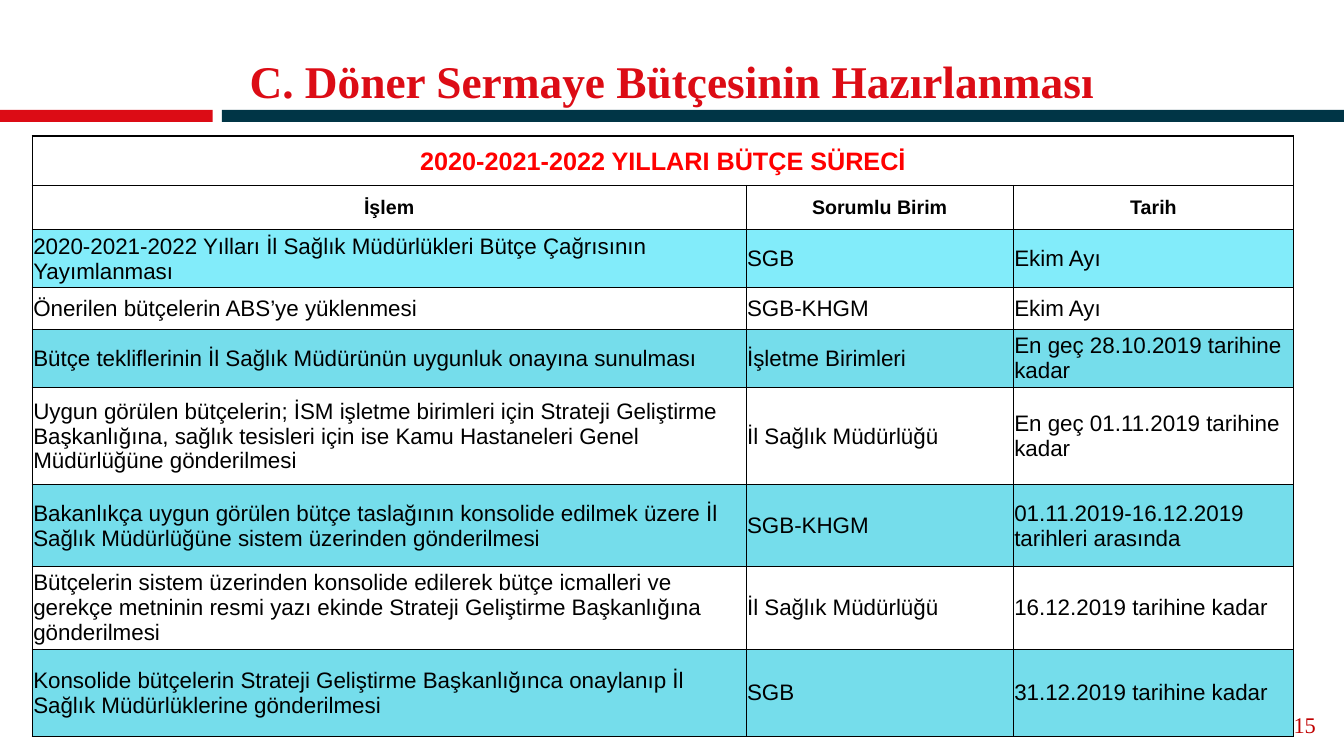
from dataclasses import dataclass

from lxml.etree import SubElement
from pptx import Presentation
from pptx.dml.color import RGBColor
from pptx.enum.shapes import MSO_SHAPE
from pptx.enum.text import MSO_ANCHOR, PP_ALIGN
from pptx.oxml.ns import qn
from pptx.util import Inches, Pt

TITLE = "C. Döner Sermaye Bütçesinin Hazırlanması"
SLIDE_NUMBER = "15"
TABLE_TITLE = "2020-2021-2022 YILLARI BÜTÇE SÜRECİ"
HEADERS = ("İşlem", "Sorumlu Birim", "Tarih")
STEPS = [
    ("2020-2021-2022 Yılları İl Sağlık Müdürlükleri Bütçe Çağrısının Yayımlanması",
     "SGB", "Ekim Ayı"),
    ("Önerilen bütçelerin ABS’ye yüklenmesi", "SGB-KHGM", "Ekim Ayı"),
    ("Bütçe tekliflerinin İl Sağlık Müdürünün uygunluk onayına sunulması",
     "İşletme Birimleri", "En geç 28.10.2019 tarihine kadar"),
    ("Uygun görülen bütçelerin; İSM işletme birimleri için Strateji Geliştirme Başkanlığına, "
     "sağlık tesisleri için ise Kamu Hastaneleri Genel Müdürlüğüne gönderilmesi",
     "İl Sağlık Müdürlüğü", "En geç 01.11.2019 tarihine kadar"),
    ("Bakanlıkça uygun görülen bütçe taslağının konsolide edilmek üzere İl Sağlık Müdürlüğüne "
     "sistem üzerinden gönderilmesi",
     "SGB-KHGM", "01.11.2019-16.12.2019 tarihleri arasında"),
    ("Bütçelerin sistem üzerinden konsolide edilerek bütçe icmalleri ve gerekçe metninin resmi "
     "yazı ekinde Strateji Geliştirme Başkanlığına gönderilmesi",
     "İl Sağlık Müdürlüğü", "16.12.2019 tarihine kadar"),
    ("Konsolide bütçelerin Strateji Geliştirme Başkanlığınca onaylanıp İl Sağlık "
     "Müdürlüklerine gönderilmesi",
     "SGB", "31.12.2019 tarihine kadar"),
]
SLIDE_WIDTH, SLIDE_HEIGHT = 13.33, 7.5
COLUMN_WIDTHS = (7.08, 2.65, 2.78)
ROW_HEIGHTS = (0.49, 0.44, 0.57, 0.42, 0.57, 0.97, 0.81, 0.82, 0.87)
TABLE_LEFT, TABLE_TOP = 0.32, 1.35
RULE_TOP, RULE_HEIGHT, RULE_SPLIT, RULE_GAP = 1.09, 0.12, 2.11, 0.09


@dataclass(frozen=True)
class Theme:
    red: str = "DC0C15"
    navy: str = "003546"
    number: str = "C00000"
    heading: str = "FF0000"
    text: str = "000000"
    first_band: str = "82ECFA"
    band: str = "75DDEB"
    serif: str = "Times New Roman"
    sans: str = "Arial"
    title_size: float = 32.4
    heading_size: float = 18
    header_size: float = 14
    body_size: float = 16
    outer_line: float = 1
    inner_line: float = 0.5


THEME = Theme()


def write_text(frame, text, size, color=THEME.text, font=THEME.sans, bold=False,
               align=PP_ALIGN.LEFT):
    frame.word_wrap = True
    paragraph = frame.paragraphs[0]
    paragraph.alignment = align
    run = paragraph.add_run()
    run.text = text
    run.font.name = font
    run.font.size = Pt(size)
    run.font.bold = bold
    run.font.color.rgb = RGBColor.from_string(color)


def add_label(slide, box, text, **text_format):
    frame = slide.shapes.add_textbox(*map(Inches, box)).text_frame
    frame.vertical_anchor = MSO_ANCHOR.MIDDLE
    write_text(frame, text, **text_format)


def add_bar(slide, left, width, color):
    bar = slide.shapes.add_shape(
        MSO_SHAPE.RECTANGLE, *map(Inches, (left, RULE_TOP, width, RULE_HEIGHT)))
    bar.shadow.inherit = False
    bar.fill.solid()
    bar.fill.fore_color.rgb = RGBColor.from_string(color)
    bar.line.fill.background()


def set_borders(cell, row, column):
    outer = {
        "a:lnL": column == 0 or row == 0,
        "a:lnR": column == len(COLUMN_WIDTHS) - 1 or row == 0,
        "a:lnT": row <= 1,
        "a:lnB": row in (0, len(ROW_HEIGHTS) - 1),
    }
    properties = cell._tc.get_or_add_tcPr()
    for side, is_outer in outer.items():
        width = Pt(THEME.outer_line if is_outer else THEME.inner_line)
        line = SubElement(properties, qn(side), w=str(width))
        fill = SubElement(line, qn("a:solidFill"))
        SubElement(fill, qn("a:srgbClr"), val=THEME.text)


def style_cell(cell, row, column):
    cell.vertical_anchor = MSO_ANCHOR.MIDDLE
    cell.margin_left = cell.margin_right = cell.margin_top = Inches(0.01)
    cell.margin_bottom = 0
    set_borders(cell, row, column)
    if row >= 2 and row % 2 == 0:
        cell.fill.solid()
        color = THEME.first_band if row == 2 else THEME.band
        cell.fill.fore_color.rgb = RGBColor.from_string(color)
    else:
        cell.fill.background()


def add_budget_table(slide):
    box = (TABLE_LEFT, TABLE_TOP, sum(COLUMN_WIDTHS), sum(ROW_HEIGHTS))
    table = slide.shapes.add_table(
        len(ROW_HEIGHTS), len(COLUMN_WIDTHS), *map(Inches, box)).table
    table.first_row = table.horz_banding = False
    for column, width in zip(table.columns, COLUMN_WIDTHS):
        column.width = Inches(width)
    for row, height in zip(table.rows, ROW_HEIGHTS):
        row.height = Inches(height)
    for row in range(len(ROW_HEIGHTS)):
        for column in range(len(COLUMN_WIDTHS)):
            style_cell(table.cell(row, column), row, column)
    table.cell(0, 0).merge(table.cell(0, len(COLUMN_WIDTHS) - 1))
    write_text(table.cell(0, 0).text_frame, TABLE_TITLE, size=THEME.heading_size,
               color=THEME.heading, bold=True, align=PP_ALIGN.CENTER)
    header_format = dict(size=THEME.header_size, bold=True, align=PP_ALIGN.CENTER)
    body_format = dict(size=THEME.body_size)
    for row, texts in enumerate([HEADERS, *STEPS], start=1):
        text_format = header_format if row == 1 else body_format
        for column, text in enumerate(texts):
            write_text(table.cell(row, column).text_frame, text, **text_format)


def main():
    presentation = Presentation()
    presentation.slide_width = Inches(SLIDE_WIDTH)
    presentation.slide_height = Inches(SLIDE_HEIGHT)
    slide = presentation.slides.add_slide(presentation.slide_layouts[6])
    navy_left = RULE_SPLIT + RULE_GAP
    add_bar(slide, 0, RULE_SPLIT, THEME.red)
    add_bar(slide, navy_left, SLIDE_WIDTH - navy_left, THEME.navy)
    add_label(slide, (12.25, 6.99, 0.9, 0.4), SLIDE_NUMBER, size=THEME.body_size,
              color=THEME.number, font=THEME.serif, align=PP_ALIGN.RIGHT)
    add_label(slide, (0, 0.4, SLIDE_WIDTH, 0.8), TITLE, size=THEME.title_size,
              color=THEME.red, font=THEME.serif, bold=True, align=PP_ALIGN.CENTER)
    add_budget_table(slide)
    presentation.save("out.pptx")


if __name__ == "__main__":
    main()
